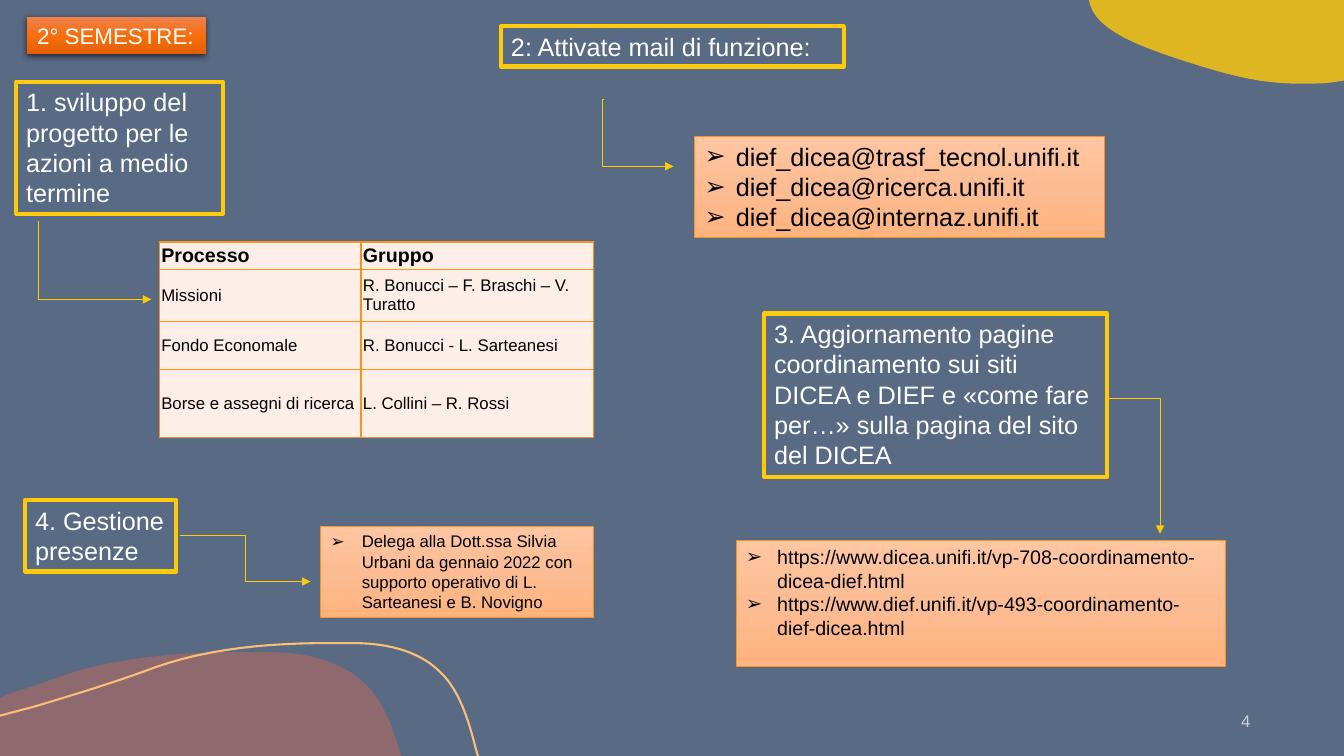
import copy
from dataclasses import dataclass
from typing import Optional

import pptx
import pptx.util
import pptx.dml.color
import pptx.enum.shapes
import pptx.enum.text
import pptx.oxml
import pptx.oxml.ns
from lxml import etree

Inches, Pt, qn = pptx.util.Inches, pptx.util.Pt, pptx.oxml.ns.qn
FONT = "Arial"
BULLET_INDENT = Inches(0.31)
COLORS = {
    "background": "596A85", "yellow": "FFCA08", "rose": "9C6A6A", "sand": "FBBE77",
    "orange": "F8931D", "cell": "FEEEE8", "white": "FFFFFF", "black": "000000",
}
TITLE_GRADIENT = ("F0814D", "F76E0B", "E56000")
PANEL_GRADIENT = ("FEC6A1", "FCBC93", "FFB37E")


@dataclass
class Curve:
    """Steps hold one point (line) or three points (cubic curve)."""
    start: tuple[float, float]
    steps: list[tuple[float, ...]]
    color: str
    filled: bool = True


@dataclass
class Box:
    place: tuple[float, float, float, float]
    lines: list[str]
    size: int = 18
    panel: bool = False


@dataclass
class Elbow:
    place: tuple[float, float, float, float]
    preset: str = "bentConnector3"
    bend: Optional[int] = None
    upright: bool = False


CURVES = [
    Curve((13.33, 0), [
        (10.8, 0), (10.81, 0.04), (10.88, 0.31, 11.33, 0.47, 11.76, 0.61),
        (12.11, 0.72, 12.48, 0.84, 12.93, 0.83), (13.02, 0.83, 13.11, 0.83, 13.2, 0.82),
        (13.33, 0.8)], "yellow"),
    Curve((2.4, 6.47), [
        (1.77, 6.47, 1.11, 6.52, 0.52, 6.74), (0.41, 6.78, 0.3, 6.82, 0.19, 6.85),
        (0, 6.92), (0, 7.5), (3.98, 7.5), (3.96, 7.44),
        (3.89, 7.19, 3.79, 6.96, 3.64, 6.8), (3.39, 6.55, 3.02, 6.47, 2.67, 6.47)], "rose"),
    Curve((4.74, 7.5), [
        (4.72, 7.43), (4.65, 7.15, 4.56, 6.86, 4.38, 6.68),
        (4.16, 6.45, 3.82, 6.38, 3.5, 6.38), (3.26, 6.38),
        (2.68, 6.38, 2.08, 6.43, 1.54, 6.62), (1.14, 6.77, 0.74, 6.89, 0.34, 7.01),
        (0, 7.1)], "sand", False),
]
BOXES = [
    Box((0.16, 0.81, 2.05, 1.31), ["1. sviluppo del progetto per le azioni a medio termine"]),
    Box((4.97, 0.26, 3.4, 0.4), ["2: Attivate mail di funzione:"]),
    Box((6.89, 1.35, 4.06, 1.01), [
        "dief_dicea@trasf_tecnol.unifi.it", "dief_dicea@ricerca.unifi.it",
        "dief_dicea@internaz.unifi.it"], panel=True),
    Box((7.58, 3.11, 3.4, 1.62), [
        "3. Aggiornamento pagine coordinamento sui siti DICEA e DIEF e "
        "«come fare per…» sulla pagina del sito del DICEA"]),
    Box((7.3, 5.36, 4.85, 1.25), [
        "https://www.dicea.unifi.it/vp-708-coordinamento-dicea-dief.html",
        "https://www.dief.unifi.it/vp-493-coordinamento-dief-dicea.html"], 14, True),
    Box((0.25, 4.96, 1.5, 0.71), ["4. Gestione presenze"]),
    Box((3.18, 5.22, 2.71, 0.91), [
        "Delega alla Dott.ssa Silvia Urbani da gennaio 2022 con supporto operativo di "
        "L. Sarteanesi e B. Novigno"], 12, True),
]
ELBOWS = [
    Elbow((0.55, 2.02, 0.78, 1.12), "bentConnector2", upright=True),
    Elbow((5.99, 0.99, 0.69, 0.66), bend=-2300),
    Elbow((10.59, 4.38, 1.31, 0.52), bend=-2900, upright=True),
    Elbow((1.79, 5.31, 1.29, 0.46), bend=50000),
]
COLUMN_WIDTHS = (2, 2.31)
ROW_HEIGHTS = (0.27, 0.52, 0.48, 0.67)
GROUPS = [
    ("Processo", "Gruppo"),
    ("Missioni", "R. Bonucci – F. Braschi – V. Turatto"),
    ("Fondo Economale", "R. Bonucci - L. Sarteanesi"),
    ("Borse e assegni di ricerca", "L. Collini – R. Rossi"),
]


def rgb(name: str) -> pptx.dml.color.RGBColor:
    return pptx.dml.color.RGBColor.from_string(COLORS.get(name, name))


def set_alpha(element, percent: int) -> None:
    for color in element.iter(qn("a:srgbClr")):
        etree.SubElement(color, qn("a:alpha")).set("val", str(percent * 1000))


def add_run(paragraph, text: str, size: int, color: str, bold: bool = False):
    run = paragraph.add_run()
    run.text = text
    run.font.name, run.font.size, run.font.bold = FONT, Pt(size), bold
    run.font.color.rgb = rgb(color)
    return run


def add_bullet(paragraph) -> None:
    properties = paragraph._p.get_or_add_pPr()
    properties.set("marL", str(BULLET_INDENT))
    properties.set("indent", str(-BULLET_INDENT))
    etree.SubElement(properties, qn("a:buFont")).set("typeface", FONT)
    etree.SubElement(properties, qn("a:buChar")).set("char", "➢")


def fill_gradient(shape, colors: tuple[str, ...]) -> None:
    shape.fill.gradient()
    shape.fill.gradient_angle = 270
    stops = shape.element.spPr.find(f"{qn('a:gradFill')}/{qn('a:gsLst')}")
    stops.insert(1, copy.deepcopy(stops[0]))
    for index, (stop, color) in enumerate(zip(shape.fill.gradient_stops, colors)):
        stop.color.rgb, stop.position = rgb(color), index / 2


def add_curve(slide, curve: Curve) -> None:
    points, current = [], curve.start
    for step in curve.steps:
        if len(step) == 6:
            (x0, y0), (x1, y1, x2, y2, x3, y3) = current, step
            for t in (index / 12 for index in range(1, 12)):
                a, b, c, d = (1 - t) ** 3, 3 * t * (1 - t) ** 2, 3 * t * t * (1 - t), t ** 3
                points.append((a * x0 + b * x1 + c * x2 + d * x3,
                               a * y0 + b * y1 + c * y2 + d * y3))
        current = step[-2:]
        points.append(current)
    builder = slide.shapes.build_freeform(*map(Inches, curve.start), scale=1.0)
    builder.add_line_segments([(Inches(x), Inches(y)) for x, y in points], close=curve.filled)
    shape = builder.convert_to_shape()
    shape.shadow.inherit = False
    if curve.filled:
        shape.fill.solid()
        shape.fill.fore_color.rgb = rgb(curve.color)
        shape.line.fill.background()
        set_alpha(shape.element.spPr, 80)
    else:
        shape.fill.background()
        shape.line.color.rgb, shape.line.width = rgb(curve.color), Pt(1.5)


def add_box(slide, box: Box):
    shape = slide.shapes.add_shape(
        pptx.enum.shapes.MSO_SHAPE.RECTANGLE, *map(Inches, box.place))
    shape.shadow.inherit = False
    if box.panel:
        fill_gradient(shape, PANEL_GRADIENT)
    else:
        shape.fill.background()
    shape.line.color.rgb = rgb("orange" if box.panel else "yellow")
    shape.line.width = Pt(0.5 if box.panel else 3)
    frame = shape.text_frame
    frame.word_wrap = True
    frame.auto_size = pptx.enum.text.MSO_AUTO_SIZE.SHAPE_TO_FIT_TEXT
    frame.vertical_anchor = pptx.enum.text.MSO_ANCHOR.TOP
    for index, text in enumerate(box.lines):
        paragraph = frame.add_paragraph() if index else frame.paragraphs[0]
        paragraph.alignment = pptx.enum.text.PP_ALIGN.LEFT
        if box.panel:
            add_bullet(paragraph)
        add_run(paragraph, text, box.size, "black" if box.panel else "white")
    return shape


def add_title(slide) -> None:
    shape = add_box(slide, Box((0.27, 0.17, 1.77, 0.37), ["2° SEMESTRE:"], 16))
    shape.text_frame.word_wrap = False
    fill_gradient(shape, TITLE_GRADIENT)
    shape.line.fill.background()
    effects = shape.element.spPr.find(qn("a:effectLst"))
    shadow = etree.SubElement(effects, qn("a:outerShdw"), blurRad=str(Pt(4.5)),
                              dist=str(Pt(1.5)), dir="5400000", rotWithShape="0")
    etree.SubElement(shadow, qn("a:srgbClr")).set("val", COLORS["black"])
    set_alpha(shadow, 63)


def add_elbow(slide, elbow: Elbow) -> None:
    left, top, width, height = elbow.place
    connector = slide.shapes.add_connector(
        pptx.enum.shapes.MSO_CONNECTOR.ELBOW,
        *map(Inches, (left, top, left + width, top + height)))
    connector.line.color.rgb, connector.line.width = rgb("yellow"), Pt(0.5)
    properties = connector.element.spPr
    geometry = properties.find(qn("a:prstGeom"))
    geometry.set("prst", elbow.preset)
    if elbow.bend is not None:
        etree.SubElement(geometry.find(qn("a:avLst")), qn("a:gd"),
                         name="adj1", fmla=f"val {elbow.bend}")
    if elbow.upright:
        properties.find(qn("a:xfrm")).set("rot", "16200000")
        properties.find(qn("a:xfrm")).set("flipH", "1")
    etree.SubElement(properties.find(qn("a:ln")), qn("a:tailEnd")).set("type", "triangle")
    etree.SubElement(properties, qn("a:effectLst"))


def add_groups_table(slide) -> None:
    table = slide.shapes.add_table(
        len(GROUPS), len(COLUMN_WIDTHS), Inches(1.58), Inches(2.4),
        Inches(sum(COLUMN_WIDTHS)), Inches(sum(ROW_HEIGHTS))).table
    table.first_row = table.horz_banding = False
    for column, width in zip(table.columns, COLUMN_WIDTHS):
        column.width = Inches(width)
    for row_index, (row, height) in enumerate(zip(table.rows, ROW_HEIGHTS)):
        row.height = Inches(height)
        for cell, text in zip(row.cells, GROUPS[row_index]):
            cell.margin_left = cell.margin_right = Inches(0.02)
            cell.margin_top = cell.margin_bottom = 0
            cell.vertical_anchor = pptx.enum.text.MSO_ANCHOR.MIDDLE
            for side in ("lnL", "lnR", "lnT", "lnB"):
                border = etree.SubElement(cell._tc.tcPr, qn(f"a:{side}"), w=str(Pt(1)))
                solid = etree.SubElement(border, qn("a:solidFill"))
                etree.SubElement(solid, qn("a:srgbClr")).set("val", COLORS["orange"])
            cell.fill.solid()
            cell.fill.fore_color.rgb = rgb("cell")
            header = row_index == 0
            add_run(cell.text_frame.paragraphs[0], text, 14 if header else 12, "black", header)


def add_page_number(slide) -> None:
    frame = slide.shapes.add_textbox(*map(Inches, (10.83, 6.95, 1.67, 0.4))).text_frame
    frame.word_wrap = True
    frame.vertical_anchor = pptx.enum.text.MSO_ANCHOR.MIDDLE
    frame.paragraphs[0].alignment = pptx.enum.text.PP_ALIGN.RIGHT
    set_alpha(add_run(frame.paragraphs[0], "4", 12, "white")._r, 70)


def main() -> None:
    presentation = pptx.Presentation()
    presentation.slide_width, presentation.slide_height = Inches(13.33), Inches(7.5)
    slide = presentation.slides.add_slide(presentation.slide_layouts[6])
    slide.background.fill.solid()
    slide.background.fill.fore_color.rgb = rgb("background")
    # Decoration
    for curve in CURVES:
        add_curve(slide, curve)
    # Content
    add_title(slide)
    add_groups_table(slide)
    for box in BOXES:
        add_box(slide, box)
    for elbow in ELBOWS:
        add_elbow(slide, elbow)
    add_page_number(slide)
    presentation.save("out.pptx")


if __name__ == "__main__":
    main()
